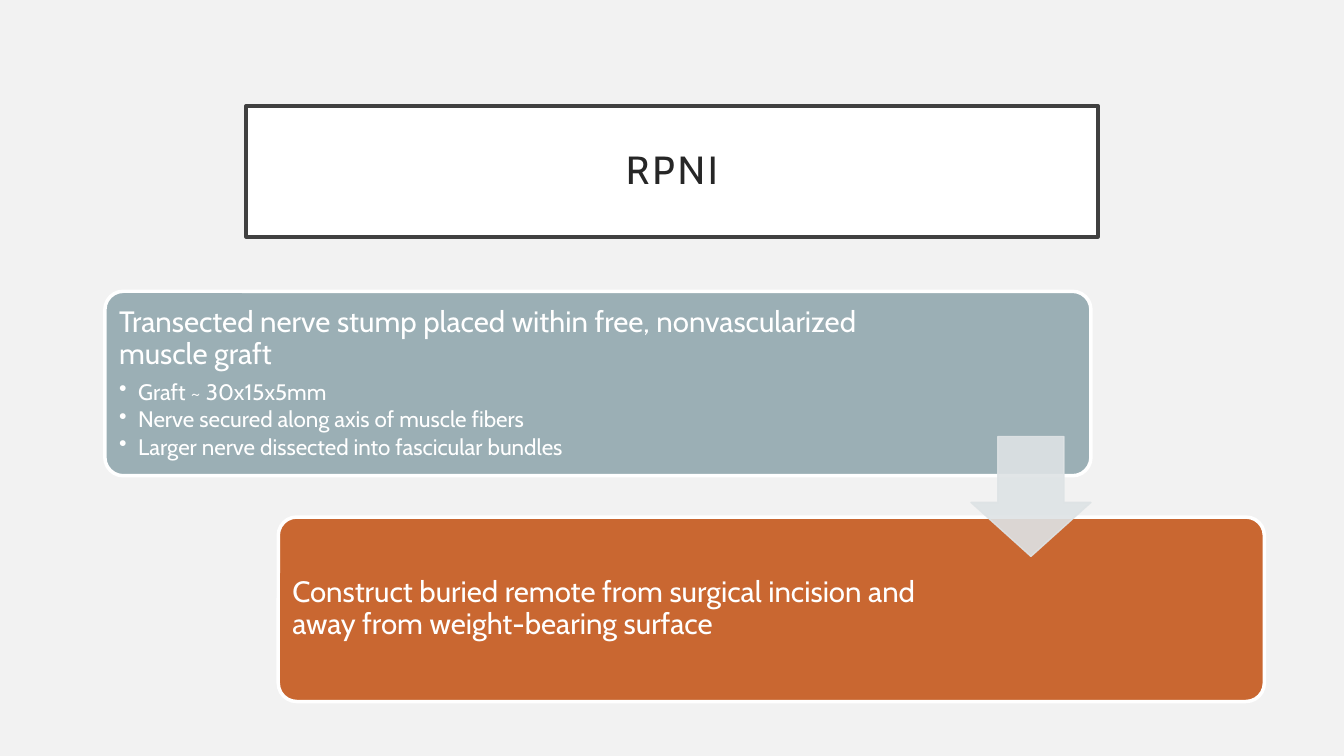
import pptx
import pptx.util
import pptx.dml.color
import pptx.enum.shapes
import pptx.enum.text
import pptx.oxml
import pptx.oxml.ns

Inches = pptx.util.Inches
Pt = pptx.util.Pt
SHAPE = pptx.enum.shapes.MSO_SHAPE
ALIGN = pptx.enum.text.PP_ALIGN

COLORS = {
    "background": "F2F2F2",
    "white": "FFFFFF",
    "frame": "404040",
    "title": "262626",
    "graft": "9BAFB5",
    "burial": "C96731",
    "arrow": "DEE3E5",
}
FONT = "Cabin"
STEP_WIDTH, STEP_HEIGHT = 9.78, 1.83
STEP_INSET = 0.05
ARROW_SIZE = 1.19

STEPS = [
    {
        "left": 1.04, "top": 2.89, "text_width": 7.89, "color": "graft",
        "heading": "Transected nerve stump placed within free, nonvascularized muscle graft",
        "details": [
            "Graft ~ 30x15x5mm",
            "Nerve secured along axis of muscle fibers",
            "Larger nerve dissected into fascicular bundles",
        ],
    },
    {
        "left": 2.76, "top": 5.13, "text_width": 6.76, "color": "burial",
        "heading": "Construct buried remote from surgical incision and away from weight-bearing surface",
        "details": [],
    },
]


def rgb(name):
    return pptx.dml.color.RGBColor.from_string(COLORS[name])


def paint(shape, fill, line, width):
    shape.fill.solid()
    shape.fill.fore_color.rgb = rgb(fill)
    shape.line.color.rgb = rgb(line)
    shape.line.width = Pt(width)


def set_frame(frame, inset):
    frame.word_wrap = True
    frame.auto_size = pptx.enum.text.MSO_AUTO_SIZE.NONE
    frame.vertical_anchor = pptx.enum.text.MSO_ANCHOR.MIDDLE
    frame.margin_left = frame.margin_right = Inches(inset)
    frame.margin_top = frame.margin_bottom = Inches(inset)


def style_paragraph(paragraph, size, color, align, space_after=0):
    paragraph.alignment = align
    paragraph.line_spacing = 0.9
    paragraph.space_before = Pt(0)
    paragraph.space_after = Pt(space_after)
    paragraph.font.name = FONT
    paragraph.font.size = Pt(size)
    paragraph.font.color.rgb = rgb(color)


def add_bullet(paragraph):
    properties = paragraph._p.get_or_add_pPr()
    properties.set("marL", str(Inches(0.19)))
    properties.set("indent", str(-Inches(0.19)))
    bullet = pptx.oxml.parse_xml(
        f'<a:buChar {pptx.oxml.ns.nsdecls("a")} char="•"/>')
    properties.insert_element_before(bullet, "a:tabLst", "a:defRPr", "a:extLst")


def build_title(slide, left, top, width, height):
    title = slide.shapes.title
    title.left, title.top = Inches(left), Inches(top)
    title.width, title.height = Inches(width), Inches(height)
    paint(title, "white", "frame", 2.5)
    set_frame(title.text_frame, 0.2)
    heading = title.text_frame.paragraphs[0]
    heading_run = heading.add_run()
    heading_run.text = "RPNI"
    style_paragraph(heading, 28, "title", ALIGN.CENTER)
    heading_run._r.get_or_add_rPr().set("spc", "200")


def build_step(slide, left, top, text_width, color, heading, details):
    panel = slide.shapes.add_shape(
        SHAPE.ROUNDED_RECTANGLE, Inches(left), Inches(top),
        Inches(STEP_WIDTH), Inches(STEP_HEIGHT))
    panel.adjustments[0] = 0.1
    panel.shadow.inherit = False
    paint(panel, color, "white", 2.5)

    description = slide.shapes.add_textbox(
        Inches(left + STEP_INSET), Inches(top + STEP_INSET),
        Inches(text_width), Inches(STEP_HEIGHT - 2 * STEP_INSET))
    frame = description.text_frame
    set_frame(frame, 0.09)
    frame.paragraphs[0].text = heading
    style_paragraph(frame.paragraphs[0], 21, "white", ALIGN.LEFT, 7.35)
    for detail in details:
        paragraph = frame.add_paragraph()
        paragraph.text = detail
        paragraph.level = 1
        style_paragraph(paragraph, 16, "white", ALIGN.LEFT, 2.4)
        add_bullet(paragraph)


def build_arrow(slide, left, top, size):
    arrow = slide.shapes.add_shape(
        SHAPE.DOWN_ARROW, Inches(left), Inches(top), Inches(size), Inches(size))
    arrow.adjustments[0] = 0.55
    arrow.adjustments[1] = 0.45
    arrow.shadow.inherit = False
    paint(arrow, "arrow", "arrow", 1)
    for tint in arrow._element.spPr.iter(pptx.oxml.ns.qn("a:srgbClr")):
        tint.append(pptx.oxml.parse_xml(
            f'<a:alpha {pptx.oxml.ns.nsdecls("a")} val="90000"/>'))


def main():
    presentation = pptx.Presentation()
    presentation.slide_width = Inches(13.33)
    presentation.slide_height = Inches(7.5)
    slide = presentation.slides.add_slide(presentation.slide_layouts[5])
    slide.background.fill.solid()
    slide.background.fill.fore_color.rgb = rgb("background")

    build_title(slide, 2.44, 1.05, 8.45, 1.3)
    for step in STEPS:
        build_step(slide, **step)
    first_right = STEPS[0]["left"] + STEP_WIDTH
    build_arrow(slide, first_right - ARROW_SIZE, 4.33, ARROW_SIZE)
    presentation.save("out.pptx")


if __name__ == "__main__":
    main()
